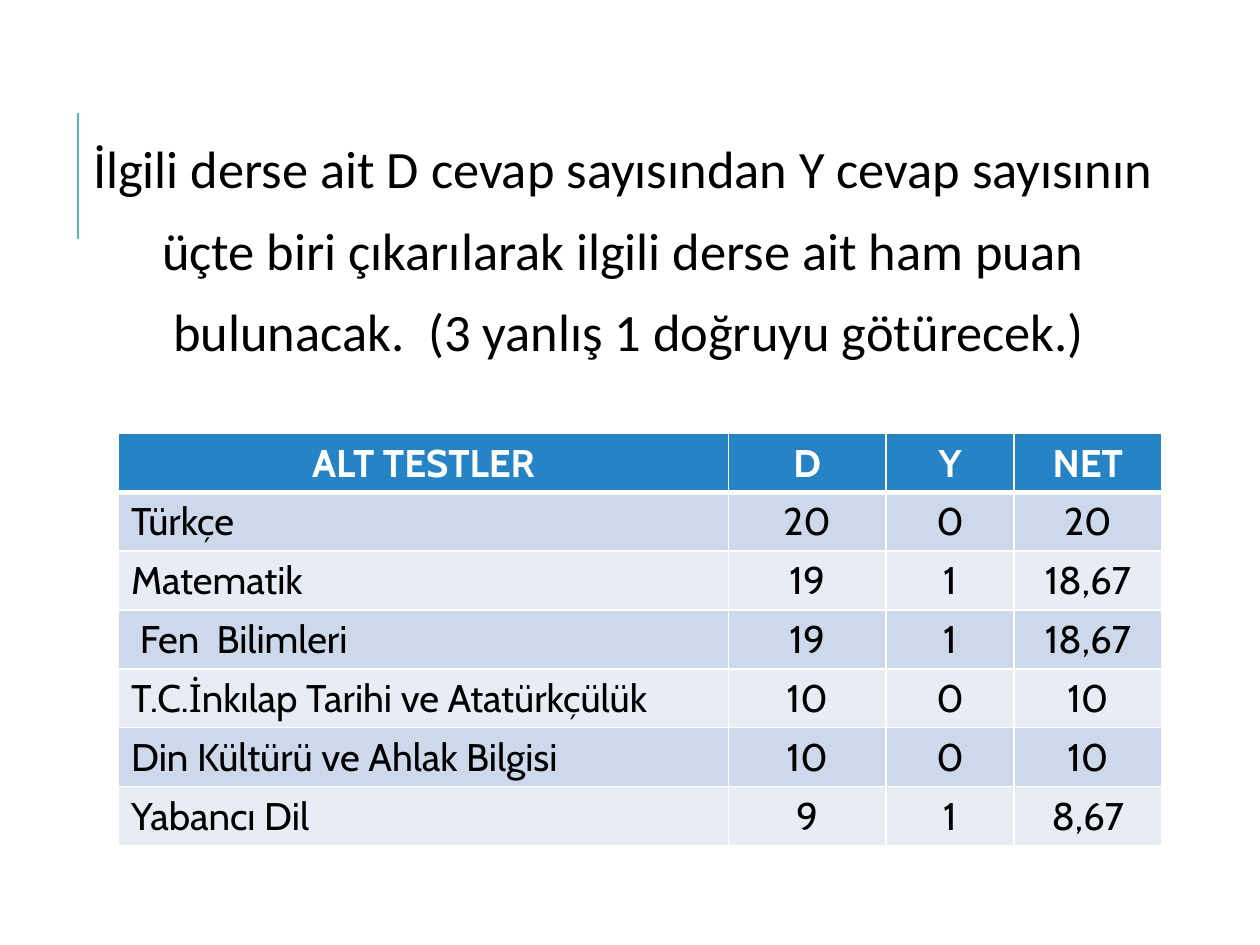
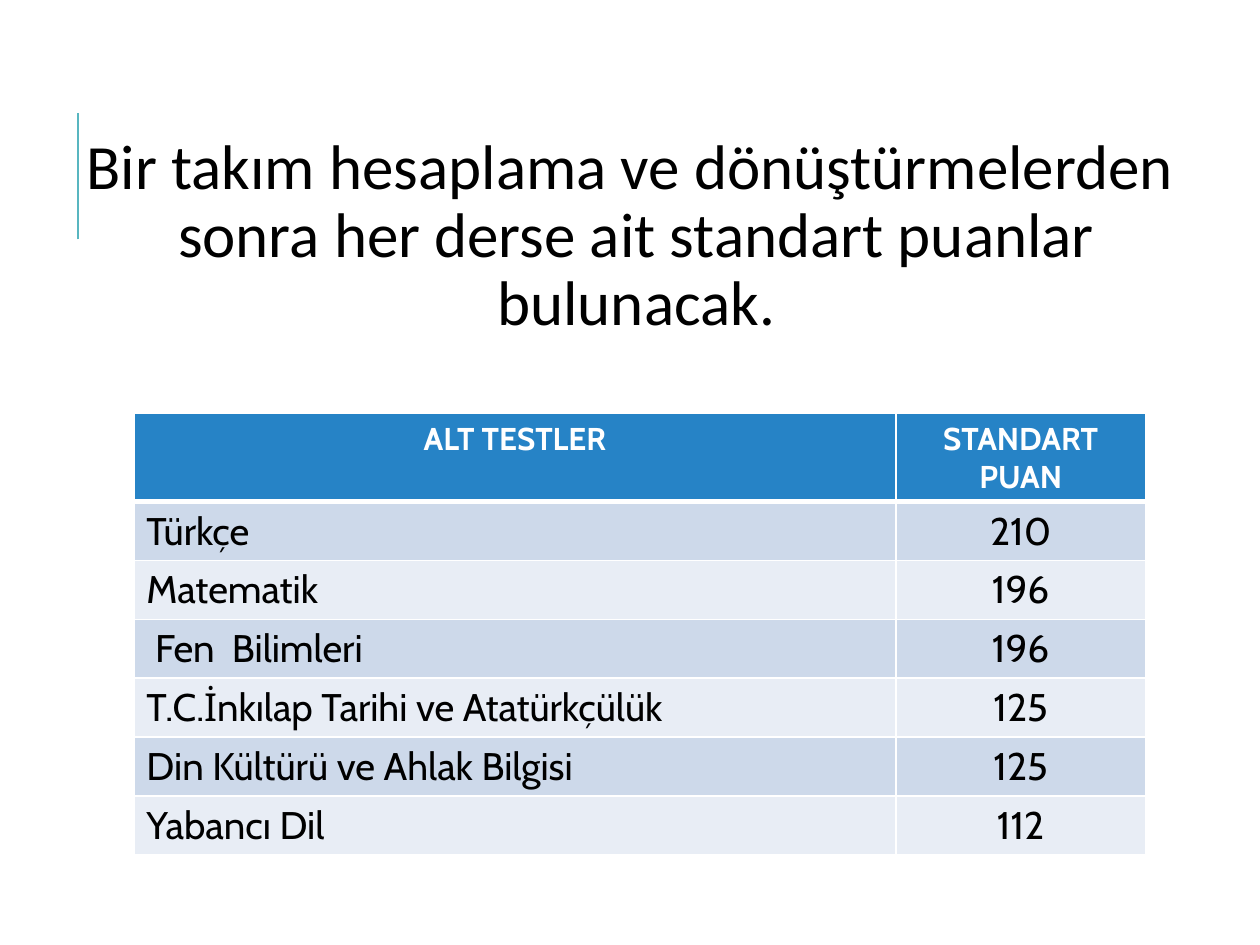
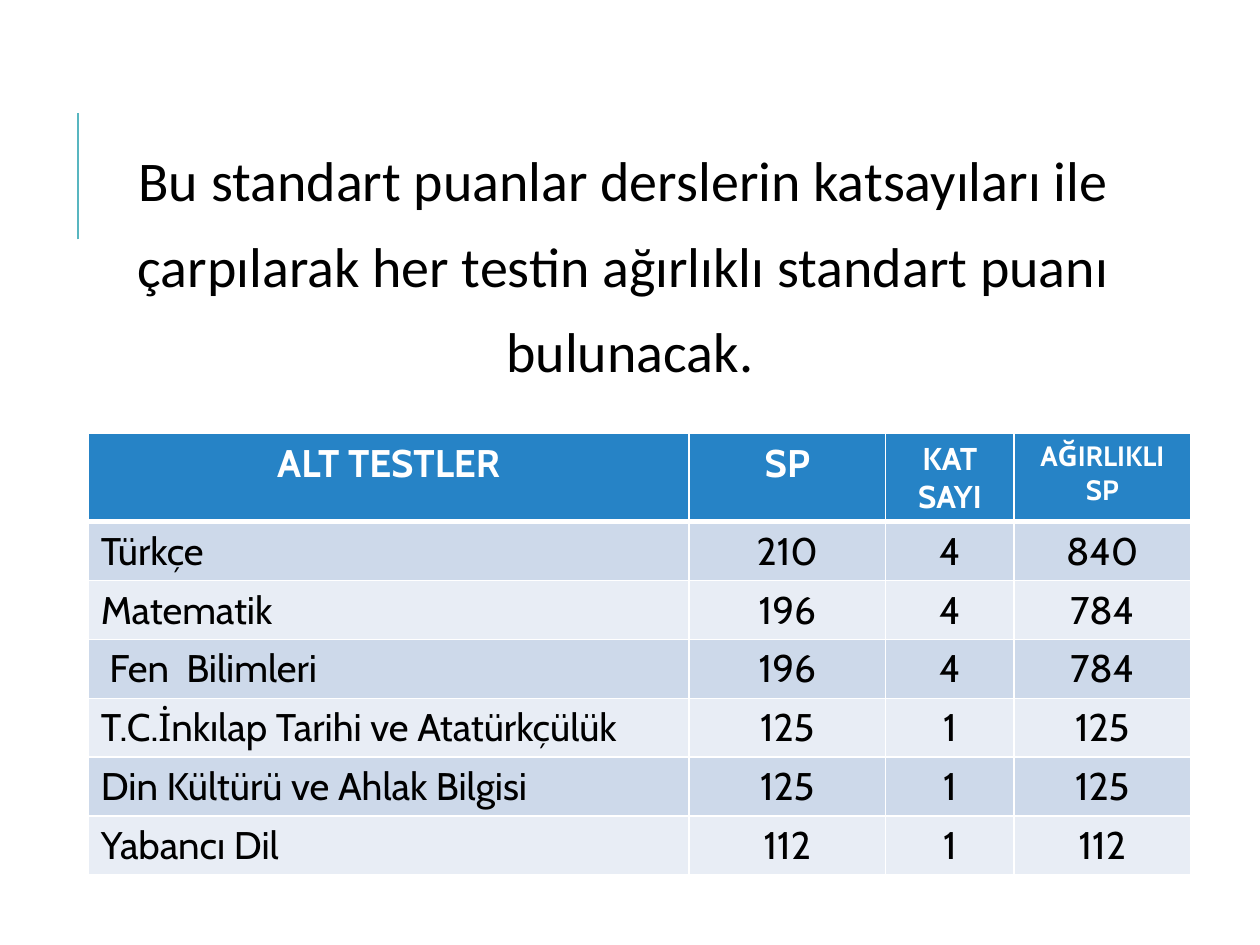
from dataclasses import dataclass
from pptx import Presentation
from pptx.dml.color import RGBColor as RGB
from pptx.enum.shapes import MSO_CONNECTOR as CONN
from pptx.enum.text import PP_ALIGN as ALIGN
from pptx.oxml import parse_xml
from pptx.oxml.ns import nsdecls
from pptx.util import Pt


@dataclass(frozen=True)
class Theme:
    accent: str = "58B6C0"
    header: str = "2683C6"
    bands: tuple = ("CDD9EA", "E8EDF5")
    white: str = "FFFFFF"
    black: str = "000000"
    intro_font: str = "Calibri"
    table_font: str = "Cabin"
    cell_size: float = 22
    rule: float = 1
    header_rule: float = 3


T = Theme()

SUBJECTS = ["Türkçe", "Matematik", " Fen  Bilimleri", "T.C.İnkılap Tarihi ve Atatürkçülük",
            "Din Kültürü ve Ahlak Bilgisi", "Yabancı Dil"]

SLIDES = [
    {
        "intro": ["İlgili derse ait D cevap sayısından Y cevap sayısının ",
                  "üçte biri çıkarılarak ilgili derse ait ham puan ",
                  "bulunacak.  (3 yanlış 1 doğruyu götürecek.)"],
        "intro_size": 30,
        "intro_box": (16.5, 78.5, 686, 419),
        "header": [("ALT TESTLER", 22), ("D", 22), ("Y", 22), ("NET", 22)],
        "columns": [["20", "19", "19", "10", "10", "9"],
                    ["0", "1", "1", "0", "0", "1"],
                    ["20", "18,67", "18,67", "10", "10", "8,67"]],
        "table_at": (67.75, 247.75),
        "widths": [348.5, 90, 73.25, 84.25],
        "row_height": 33.6,
        "table_height": 235.5,
    },
    {
        "intro": ["Bir takım hesaplama ve dönüştürmelerden sonra her derse ait "
                  "standart puanlar bulunacak."],
        "intro_size": 36,
        "intro_box": (36, 73.5, 648, 425),
        "header": [("ALT TESTLER", 18), ("STANDART PUAN", 18)],
        "columns": [["210", "196", "196", "125", "125", "112"]],
        "table_at": (76.5, 236.25),
        "widths": [435.5, 142.5],
        "row_height": 29.2,
        "table_height": 252,
    },
    {
        "intro": ["Bu standart puanlar derslerin katsayıları ile ",
                  "çarpılarak her testin ağırlıklı standart puanı ",
                  "bulunacak."],
        "intro_size": 32,
        "intro_box": (36, 84.25, 648, 413),
        "header": [("ALT TESTLER", 22), ("SP", 22), ("KAT\nSAYI", 18), ("AĞIRLIKLI SP", 16)],
        "columns": [["210", "196", "196", "125", "125", "112"],
                    ["4", "4", "4", "1", "1", "1"],
                    ["840", "784", "784", "125", "125", "112"]],
        "table_at": (50.4, 247.75),
        "widths": [343.25, 112.5, 73.25, 101],
        "row_height": 29.2,
        "table_height": 252,
    },
]


def set_font(p, name, size, color, bold=False):
    p.font.name, p.font.size, p.font.bold = name, Pt(size), bold
    p.font.color.rgb = RGB.from_string(color)


def add_accent(s):
    line = s.shapes.add_connector(CONN.STRAIGHT, Pt(44.6), Pt(136.8), Pt(44.6), Pt(64.8))
    line.line.color.rgb = RGB.from_string(T.accent)
    line.line.width = Pt(1.5)
    line._element.spPr.append(parse_xml(f"<a:effectLst {nsdecls('a')}/>"))


def add_intro(s, lines, size, box):
    tf = s.shapes.add_textbox(*map(Pt, box)).text_frame
    tf.word_wrap = True
    tf.margin_left = tf.margin_right = tf.margin_top = tf.margin_bottom = Pt(3.6)
    tf.text = "\n".join(lines)
    for p in tf.paragraphs:
        p.alignment = ALIGN.CENTER
        p.line_spacing, p.space_before, p.space_after = 0.9, Pt(12), Pt(2)
        pPr = p._p.get_or_add_pPr()
        pPr.set("marL", str(Pt(7.2)))
        pPr.set("indent", str(-Pt(7.2)))
        set_font(p, T.intro_font, size, T.black)


def set_borders(cell, top, bottom):
    tcPr = cell._tc.get_or_add_tcPr()
    for i, (side, width) in enumerate(zip("LRTB", (T.rule, T.rule, top, bottom))):
        tcPr.insert(i, parse_xml(
            f'<a:ln{side} {nsdecls("a")} w="{Pt(width)}"><a:solidFill>'
            f'<a:srgbClr val="{T.white}"/></a:solidFill></a:ln{side}>'))


def fill_cell(cell, text, size, row, col):
    head = row == 0
    cell.fill.solid()
    cell.fill.fore_color.rgb = RGB.from_string(T.header if head else T.bands[(row - 1) % 2])
    set_borders(cell, T.header_rule if row == 1 else T.rule, T.header_rule if head else T.rule)
    cell.text = text
    for p in cell.text_frame.paragraphs:
        p.alignment = ALIGN.CENTER if head or col else ALIGN.LEFT
        set_font(p, T.table_font, size, T.white if head else T.black, head)


def add_scores(s, d):
    body = [[(text, T.cell_size) for text in row] for row in zip(SUBJECTS, *d["columns"])]
    rows = [d["header"]] + body
    frame = s.shapes.add_table(len(rows), len(d["widths"]), *map(Pt, d["table_at"]),
                               Pt(sum(d["widths"])), Pt(d["table_height"]))
    tbl = frame.table
    for column, width in zip(tbl.columns, d["widths"]):
        column.width = Pt(width)
    for r, row in enumerate(rows):
        tbl.rows[r].height = Pt(d["row_height"])
        for c, (text, size) in enumerate(row):
            fill_cell(tbl.cell(r, c), text, size, r, c)
    frame.height = Pt(d["table_height"])


def main():
    prs = Presentation()
    prs.slide_width, prs.slide_height = Pt(720), Pt(540)
    for d in SLIDES:
        s = prs.slides.add_slide(prs.slide_layouts[6])
        add_accent(s)
        add_intro(s, d["intro"], d["intro_size"], d["intro_box"])
        add_scores(s, d)
    prs.save("out.pptx")


if __name__ == "__main__":
    main()
